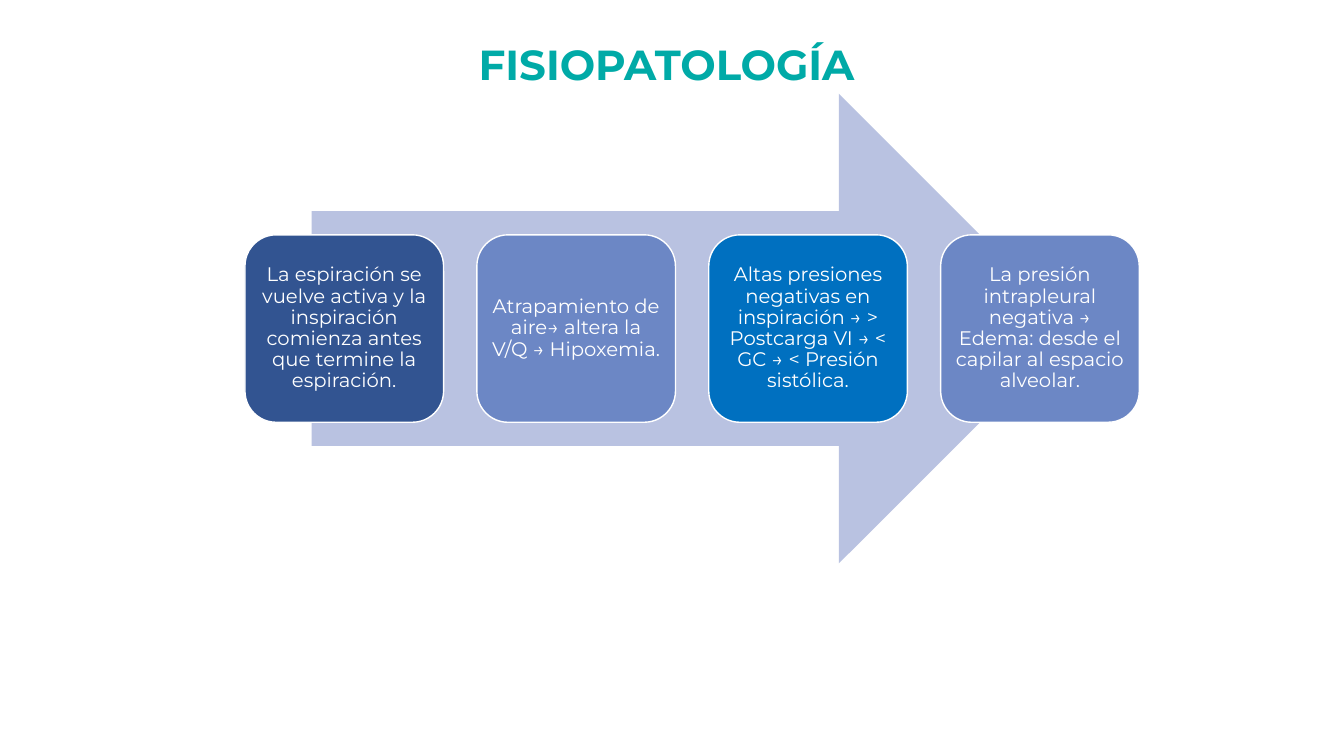
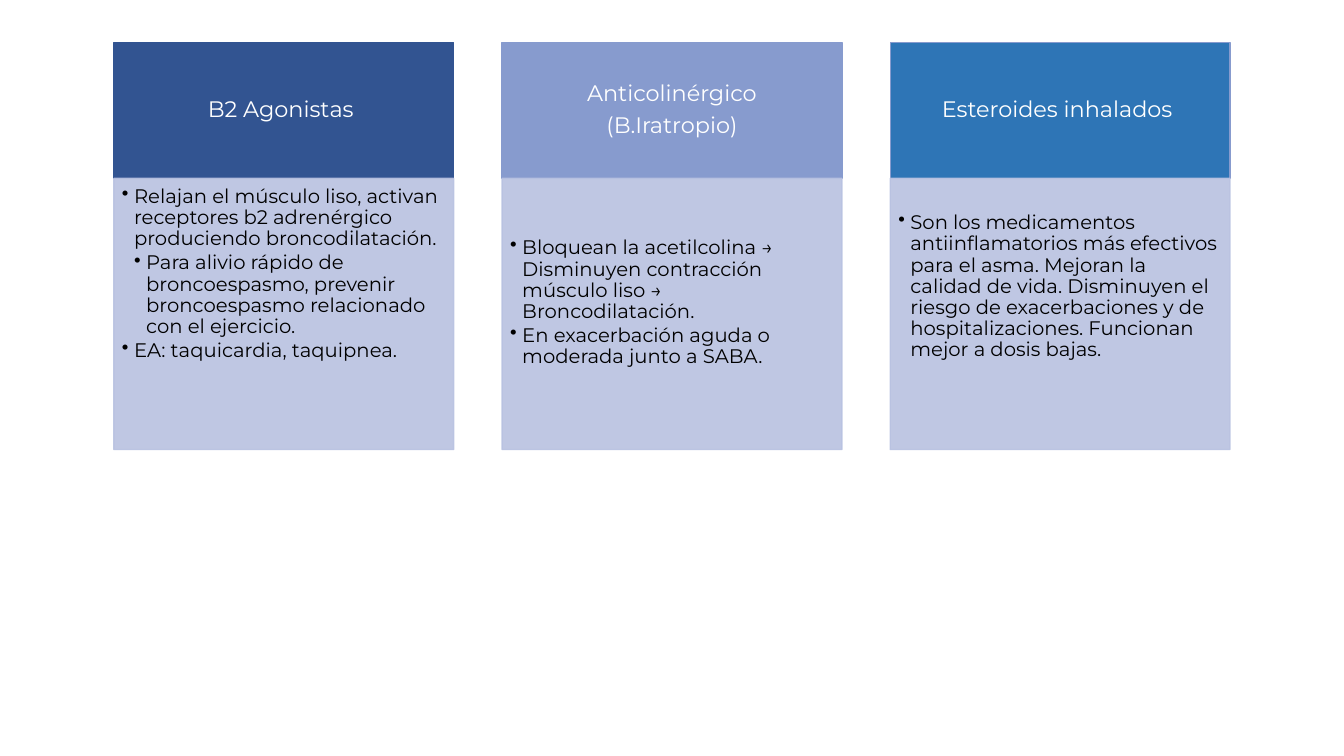
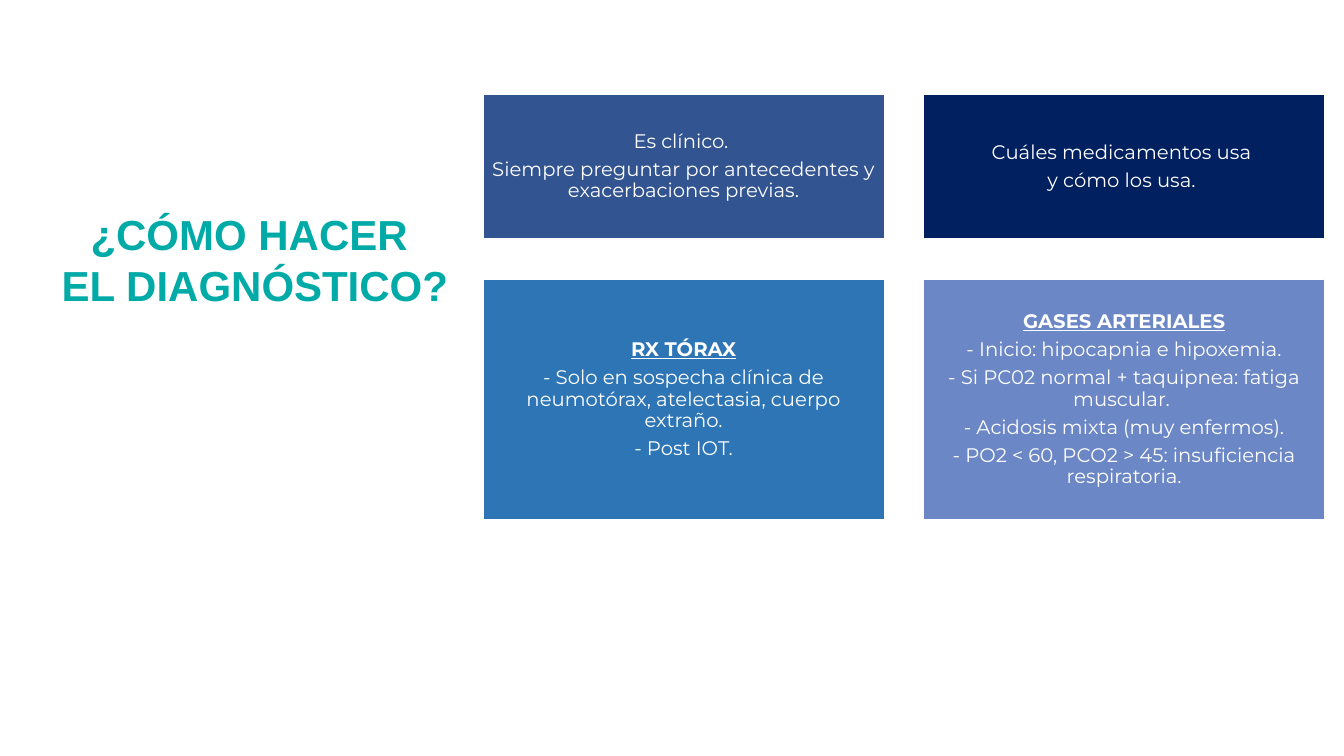
"""Build three slides on asthma: pathophysiology, drugs and diagnosis."""
from dataclasses import dataclass

from lxml import etree
from pptx import Presentation, util as u
from pptx.dml.color import RGBColor
from pptx.enum import shapes, text
from pptx.oxml.ns import qn

WIDTH, HEIGHT = 13.33, 7.5
FONT = "Montserrat"
TEAL, WHITE, BLACK = "00AAA7", "FFFFFF", "000000"
NAVY, DEEP, BLUE, SKY = "002060", "325491", "2E75B6", "0070C0"
PERIWINKLE, LAVENDER, PALE = "6C87C5", "879BCE", "B9C2E1"
TITLE_ONLY, BLANK = 5, 6
BULLET_STEP = 0.12


@dataclass(frozen=True)
class Area:
    """A rectangle in inches."""
    left: float
    top: float
    width: float
    height: float


@dataclass(frozen=True)
class Grid:
    """Columns and rows of cells with equal gaps."""
    left: float
    top: float
    columns: tuple[float, ...]
    rows: tuple[float, ...]
    gap_x: float = 0
    gap_y: float = 0

    def cell(self, column: int, row: int = 0) -> Area:
        """Return the area of one cell."""
        return Area(self.left + sum(self.columns[:column]) + column * self.gap_x,
                    self.top + sum(self.rows[:row]) + row * self.gap_y,
                    self.columns[column], self.rows[row])


@dataclass(frozen=True)
class Line:
    """One paragraph; a depth above zero makes it a bullet."""
    text: str
    depth: int = 0
    heading: bool = False


@dataclass(frozen=True)
class Style:
    """The look of the text in a box."""
    size: float = 14
    color: str = WHITE
    after: float = 0.35
    insets: tuple[float, float, float, float] = (0.06, 0.06, 0.06, 0.06)
    align: text.PP_ALIGN = text.PP_ALIGN.CENTER
    anchor: text.MSO_ANCHOR = text.MSO_ANCHOR.MIDDLE


@dataclass(frozen=True)
class Card:
    """A coloured box and its paragraphs."""
    fill: str
    lines: tuple[Line, ...]
    border: str = WHITE


@dataclass(frozen=True)
class Drug:
    """A drug column; drop lowers the text of its body."""
    head: Card
    body: tuple[Line, ...]
    drop: float = 0


FLOW_GRID = Grid(2.43, 2.33, (1.97,) * 4, (1.86,), gap_x=0.33)
DRUG_GRID = Grid(1.13, 0.42, (3.37,) * 3, (1.35, 2.69), gap_x=0.48)
DIAGNOSIS_GRID = Grid(4.79, 0.94, (3.98,) * 2, (1.43, 2.39), gap_x=0.39, gap_y=0.4)
CARD_STYLE = Style()
HEAD_STYLE = Style(size=16, insets=(0.12, 0.07, 0.12, 0.07))

STEPS = (
    Card(DEEP, (Line("La espiración se vuelve activa y la inspiración comienza "
                     "antes que termine la espiración."),)),
    Card(PERIWINKLE, (Line("Atrapamiento de aire→ altera la V/Q → Hipoxemia."),)),
    Card(SKY, (Line("Altas presiones negativas en inspiración → > Postcarga VI "
                    "→ < GC → < Presión sistólica."),)),
    Card(PERIWINKLE, (Line("La presión intrapleural negativa → Edema: desde el "
                           "capilar al espacio alveolar."),)),
)

DRUGS = (
    Drug(Card(DEEP, (Line("B2 Agonistas "),), DEEP),
         (Line("Relajan el músculo liso, activan receptores b2 adrenérgico "
               "produciendo broncodilatación.", 1),
          Line("Para alivio rápido de broncoespasmo, prevenir broncoespasmo "
               "relacionado con el ejercicio.", 2),
          Line("EA: taquicardia, taquipnea.", 1))),
    Drug(Card(LAVENDER, (Line("Anticolinérgico"), Line("(B.Iratropio)")), LAVENDER),
         (Line("Bloquean la acetilcolina → Disminuyen contracción músculo liso "
               "→ Broncodilatación.", 1),
          Line("En exacerbación aguda o moderada junto a SABA.", 1)), drop=0.51),
    Drug(Card(BLUE, (Line("Esteroides inhalados "),), LAVENDER),
         (Line("Son los medicamentos antiinflamatorios más efectivos para el asma. "
               "Mejoran la calidad de vida. Disminuyen el riesgo de exacerbaciones "
               "y de hospitalizaciones. Funcionan mejor a dosis bajas.", 1),),
         drop=0.26),
)

DIAGNOSIS = (
    Card(DEEP, (Line("Es clínico. "),
                Line("Siempre preguntar por antecedentes y exacerbaciones previas."))),
    Card(NAVY, (Line("Cuáles medicamentos usa "), Line("y cómo los usa. "))),
    Card(BLUE, (Line("RX TÓRAX", heading=True),
                Line("- Solo en sospecha clínica de neumotórax, atelectasia, "
                     "cuerpo extraño."),
                Line("- Post IOT."))),
    Card(PERIWINKLE, (Line("GASES ARTERIALES", heading=True),
                      Line("- Inicio: hipocapnia e hipoxemia."),
                      Line("- Si PC02 normal + taquipnea: fatiga muscular. "),
                      Line("- Acidosis mixta (muy enfermos)."),
                      Line("- PO2 < 60, PCO2 > 45: insuficiencia respiratoria."))),
)


def rgb(color: str) -> RGBColor:
    """Turn a hex string into a colour."""
    return RGBColor.from_string(color)


def apply(target, values: dict) -> None:
    """Set each attribute of the target from the dict."""
    for name, value in values.items():
        setattr(target, name, value)


def place(box, area: Area) -> None:
    """Move and size a box."""
    apply(box, {name: u.Inches(getattr(area, name))
                for name in ("left", "top", "width", "height")})


def add_bullet(para, depth: int) -> None:
    """Give a paragraph a hanging bullet."""
    para.level = depth
    properties = para._p.get_or_add_pPr()
    properties.set("marL", str(u.Inches(BULLET_STEP * depth)))
    properties.set("indent", str(-u.Inches(BULLET_STEP)))
    etree.SubElement(properties, qn("a:buChar")).set("char", "•")


def write(box, lines: tuple[Line, ...], style: Style) -> None:
    """Fill a box with styled paragraphs."""
    frame = box.text_frame
    left, top, right, bottom = map(u.Inches, style.insets)
    apply(frame, {"word_wrap": True, "vertical_anchor": style.anchor,
                  "margin_left": left, "margin_top": top,
                  "margin_right": right, "margin_bottom": bottom})
    for index, line in enumerate(lines):
        para = frame.add_paragraph() if index else frame.paragraphs[0]
        if line.depth:
            add_bullet(para, line.depth)
        apply(para, {"alignment": style.align, "line_spacing": 0.9,
                     "space_after": u.Pt(style.after * style.size)})
        span = para.add_run()
        span.text = line.text
        apply(span.font, {"name": FONT, "size": u.Pt(style.size),
                          "bold": line.heading, "underline": line.heading})
        span.font.color.rgb = rgb(style.color)


def add_box(page, kind: shapes.MSO_SHAPE, area: Area, fill: str,
            border: str | None = None, opacity: int = 100):
    """Draw a filled shape without shadow."""
    box = page.shapes.add_shape(kind, 0, 0, 0, 0)
    place(box, area)
    box.shadow.inherit = False
    box.fill.solid()
    box.fill.fore_color.rgb = rgb(fill)
    if border:
        box.line.color.rgb = rgb(border)
        box.line.width = u.Pt(1)
    else:
        box.line.fill.background()
    if opacity < 100:
        for color in box._element.spPr.iter(qn("a:srgbClr")):
            etree.SubElement(color, qn("a:alpha")).set("val", str(opacity * 1000))
    return box


def add_card(page, card: Card, area: Area, style: Style = CARD_STYLE,
             kind: shapes.MSO_SHAPE = shapes.MSO_SHAPE.RECTANGLE) -> None:
    """Draw a card with its text."""
    write(add_box(page, kind, area, card.fill, card.border), card.lines, style)


def add_titled_page(deck, lines: tuple[str, ...], area: Area, font: str = FONT):
    """Add a page with the shared title style."""
    page = deck.slides.add_slide(deck.slide_layouts[TITLE_ONLY])
    title = page.shapes.title
    place(title, area)
    frame = title.text_frame
    frame.text = "\n".join(lines)
    apply(frame, {"word_wrap": True, "auto_size": text.MSO_AUTO_SIZE.NONE,
                  "vertical_anchor": text.MSO_ANCHOR.TOP})
    for para in frame.paragraphs:
        para.alignment = text.PP_ALIGN.CENTER
        for span in para.runs:
            apply(span.font, {"name": font, "size": u.Pt(30), "bold": True})
            span.font.color.rgb = rgb(TEAL)
    return page


def add_pathophysiology(deck) -> None:
    """Draw the four steps on a large arrow."""
    page = add_titled_page(deck, ("FISIOPATOLOGÍA ",), Area(3.75, 0.33, 5.84, 0.61))
    add_box(page, shapes.MSO_SHAPE.RIGHT_ARROW, Area(3.09, 0.93, 7.56, 4.66), PALE)
    for column, step in enumerate(STEPS):
        add_card(page, step, FLOW_GRID.cell(column),
                 kind=shapes.MSO_SHAPE.ROUNDED_RECTANGLE)


def add_drugs(deck) -> None:
    """Draw the three drug columns."""
    page = deck.slides.add_slide(deck.slide_layouts[BLANK])
    for column, drug in enumerate(DRUGS):
        add_card(page, drug.head, DRUG_GRID.cell(column), HEAD_STYLE)
        body = add_box(page, shapes.MSO_SHAPE.RECTANGLE, DRUG_GRID.cell(column, 1),
                       PALE, PALE, opacity=90)
        write(body, drug.body,
              Style(color=BLACK, after=0.15, insets=(0.08, 0.08 + drug.drop, 0.11, 0.12),
                    align=text.PP_ALIGN.LEFT, anchor=text.MSO_ANCHOR.TOP))


def add_diagnosis(deck) -> None:
    """Draw the diagnosis title beside a grid of cards."""
    page = add_titled_page(deck, ("¿CÓMO HACER ", "EL DIAGNÓSTICO?"),
                           Area(0.33, 2.02, 4.4, 1.11), "Arial")
    for index, card in enumerate(DIAGNOSIS):
        row, column = divmod(index, len(DIAGNOSIS_GRID.columns))
        add_card(page, card, DIAGNOSIS_GRID.cell(column, row))


def main() -> None:
    """Build and save the deck."""
    deck = Presentation()
    apply(deck, {"slide_width": u.Inches(WIDTH), "slide_height": u.Inches(HEIGHT)})
    for add_page in (add_pathophysiology, add_drugs, add_diagnosis):
        add_page(deck)
    deck.save("out.pptx")


if __name__ == "__main__":
    main()
